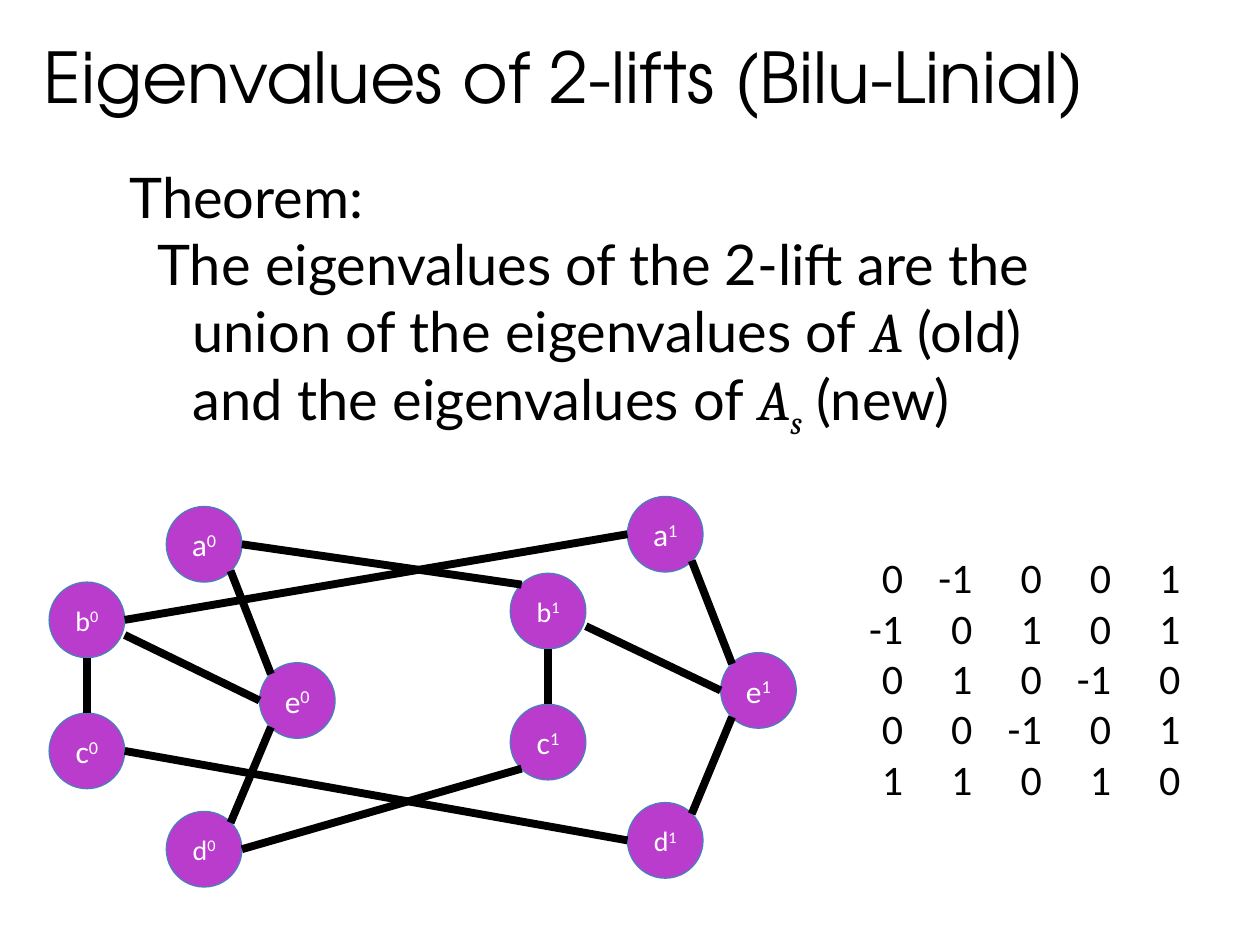
from lxml import etree
from pptx import Presentation
from pptx.dml.color import RGBColor
from pptx.enum.shapes import MSO_CONNECTOR, MSO_SHAPE
from pptx.enum.text import MSO_ANCHOR, PP_ALIGN
from pptx.oxml.ns import qn
from pptx.util import Inches, Pt

COLORS = {"ink": "000000", "node": "BA3CCC", "rim": "4B7EBC", "label": "FFFFFF"}
NODE = 0.6

# Left and top of every vertex, in the two copies of the base graph
VERTICES = {
    "a0": (1.32, 4.02), "b0": (0.39, 4.62), "c0": (0.39, 5.66),
    "d0": (1.32, 6.44), "e0": (2.06, 5.26),
    "a1": (4.98, 3.94), "b1": (4.05, 4.55), "c1": (4.05, 5.59),
    "d1": (4.98, 6.37), "e1": (5.72, 5.18),
}
SIZES = {"a": 18, "b": 16, "c": 18, "d": 16, "e": 18}

# Points on a vertex, as fractions of its box
SITES = {
    "top": (0.5, 0), "bottom": (0.5, 1), "left": (0, 0.5), "right": (1, 0.5),
    "nw": (0.15, 0.15), "ne": (0.85, 0.15), "sw": (0.15, 0.85), "se": (0.85, 0.85),
    "right_low": (1, 0.7),
}
INNER_EDGES = [
    ("a", "se", "e", "nw"), ("c", "top", "b", "bottom"),
    ("e", "left", "b", "right_low"), ("e", "sw", "d", "ne"),
]
CROSS_EDGES = [
    ("a0", "right", "b1", "nw"), ("a1", "left", "b0", "right"),
    ("d1", "left", "c0", "right"), ("d0", "right", "c1", "sw"),
]
MATRIX = [
    (0, -1, 0, 0, 1),
    (-1, 0, 1, 0, 1),
    (0, 1, 0, -1, 0),
    (0, 0, -1, 0, 1),
    (1, 1, 0, 1, 0),
]
COLUMN = 0.55


def rgb(name):
    return RGBColor.from_string(COLORS[name])


def add_run(p, text, font="Calibri", size=18, color="ink", italic=False, base=0):
    """Add a run; base raises or lowers it, in percent of the size."""
    r = p.add_run()
    r.text = text
    f = r.font
    f.name, f.size, f.italic = font, Pt(size), italic
    f.color.rgb = rgb(color)
    if base:
        f._element.set("baseline", str(base * 1000))


def indent(p, left):
    p._p.get_or_add_pPr().set("marL", str(Inches(left)))


def set_right_tabs(p, count, step):
    tabs = etree.SubElement(p._p.get_or_add_pPr(), qn("a:tabLst"))
    for i in range(1, count + 1):
        etree.SubElement(tabs, qn("a:tab"), pos=str(Inches(i * step)), algn="r")


def site_point(vertex, site):
    return [Inches(start + NODE * f) for start, f in zip(VERTICES[vertex], SITES[site])]


class Board:
    """Holds the current slide and the look of its elements."""

    def __init__(self, slide, edge_width=4.5, rim_width=0.75):
        self.shapes = slide.shapes
        self.edge_width, self.rim_width = Pt(edge_width), Pt(rim_width)

    def text(self, left, top, width, height, lines, wrap=False, **style):
        """Add a text box; a line is a list of (text, format) pairs."""
        box = self.shapes.add_textbox(*map(Inches, (left, top, width, height)))
        tf = box.text_frame
        tf.word_wrap = wrap
        for i, line in enumerate(lines):
            p = tf.paragraphs[0] if i == 0 else tf.add_paragraph()
            for text, extra in line:
                add_run(p, text, **{**style, **extra})
        return tf.paragraphs

    def vertex(self, name):
        left, top = VERTICES[name]
        sp = self.shapes.add_shape(
            MSO_SHAPE.OVAL, Inches(left), Inches(top), Inches(NODE), Inches(NODE))
        sp.shadow.inherit = False
        sp.fill.solid()
        sp.fill.fore_color.rgb = rgb("node")
        sp.line.color.rgb = rgb("rim")
        sp.line.width = self.rim_width
        tf = sp.text_frame
        tf.word_wrap = False
        tf.vertical_anchor = MSO_ANCHOR.MIDDLE
        p = tf.paragraphs[0]
        p.alignment = PP_ALIGN.CENTER
        letter, layer = name
        style = {"size": SIZES[letter], "color": "label"}
        add_run(p, letter, **style)
        add_run(p, layer, base=30, **style)

    def edge(self, start, start_site, end, end_site):
        line = self.shapes.add_connector(
            MSO_CONNECTOR.STRAIGHT,
            *site_point(start, start_site), *site_point(end, end_site))
        line.line.color.rgb = rgb("ink")
        line.line.width = self.edge_width
        etree.SubElement(line._element.spPr, qn("a:effectLst"))


def main():
    prs = Presentation()
    prs.slide_width, prs.slide_height = Inches(10), Inches(7.5)
    board = Board(prs.slides.add_slide(prs.slide_layouts[6]))

    board.text(0.25, 0.22, 9.11, 0.77, [[("Eigenvalues of 2-lifts (Bilu-Linial)", {})]],
               font="TeX Gyre Adventor", size=40)

    symbol = {"font": "Cambria", "italic": True}
    theorem = board.text(0.93, 1.24, 7.56, 2.79, [
        [("Theorem:", {})],
        [("The eigenvalues of the 2-lift are the", {})],
        [("union of the eigenvalues of ", {}), ("A", symbol), (" (old)", {})],
        [("and the eigenvalues of ", {}), ("A", symbol),
         ("s", {**symbol, "base": -25}), (" (new)", {})],
    ], font="Lato", size=32)
    for p, left in zip(theorem, (0, 0.22, 0.5, 0.5)):
        indent(p, left)

    rows = [[("".join(f"\t{value}" for value in row), {})] for row in MATRIX]
    for p in board.text(6.52, 4.33, 3.13, 2.12, rows, wrap=True, size=24):
        set_right_tabs(p, len(MATRIX[0]), COLUMN)

    for name in VERTICES:
        board.vertex(name)
    for layer in "01":
        for start, start_site, end, end_site in INNER_EDGES:
            board.edge(start + layer, start_site, end + layer, end_site)
    for ends in CROSS_EDGES:
        board.edge(*ends)

    prs.save("out.pptx")


if __name__ == "__main__":
    main()
